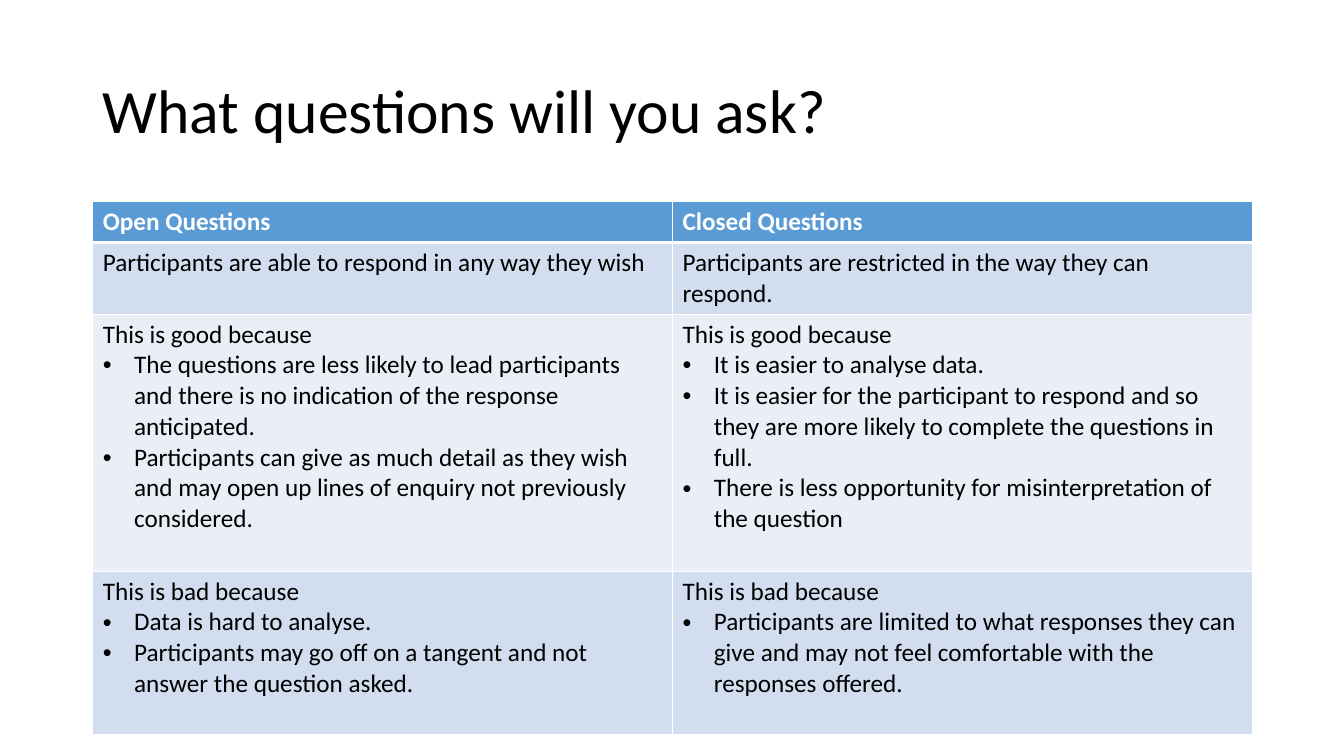
from dataclasses import dataclass
from lxml.etree import SubElement
from pptx import Presentation
from pptx.dml.color import RGBColor
from pptx.enum.text import MSO_ANCHOR, PP_ALIGN
from pptx.oxml.ns import qn
from pptx.util import Inches, Pt


@dataclass(frozen=True)
class Theme:
    font: str = "Calibri"
    title: int = 44
    body: int = 18
    black: str = "000000"
    white: str = "FFFFFF"
    head: str = "5B9BD5"
    bands: tuple = ("EAEFF7", "D2DEEF")


theme = Theme()


def style(para, size, color, bold=False):
    for run in para.runs:
        run.font.name = theme.font
        run.font.size = Pt(size)
        run.font.bold = bold
        run.font.color.rgb = RGBColor.from_string(color)


def border(cell, side, width):
    line = SubElement(cell._tc.get_or_add_tcPr(), qn(f"a:ln{side}"), w=str(Pt(width)))
    fill = SubElement(line, qn("a:solidFill"))
    SubElement(fill, qn("a:srgbClr"), val=theme.white)


rows = [
    (0.4, ["Open Questions"], ["Closed Questions"]),
    (0.71, ["Participants are able to respond in any way they wish"],
     ["Participants are restricted in the way they can respond."]),
    (2.55, ["This is good because",
            "The questions are less likely to lead participants and there is no "
            "indication of the response anticipated.",
            "Participants can give as much detail as they wish and may open up "
            "lines of enquiry not previously considered."],
     ["This is good because",
      "It is easier to analyse data.",
      "It is easier for the participant to respond and so they are more likely "
      "to complete the questions in full.",
      "There is less opportunity for misinterpretation of the question"]),
    (1.62, ["This is bad because",
            "Data is hard to analyse.",
            "Participants may go off on a tangent and not answer the question asked."],
     ["This is bad because",
      "Participants are limited to what responses they can give and may not feel "
      "comfortable with the responses offered."]),
]

deck = Presentation()
deck.slide_width = Inches(13.33)
deck.slide_height = Inches(7.5)
slide = deck.slides.add_slide(deck.slide_layouts[5])

title = slide.shapes.title
title.left, title.top = Inches(0.92), Inches(0.4)
title.width, title.height = Inches(11.5), Inches(1.45)
title.text_frame.text = "What questions will you ask?"
title.text_frame.vertical_anchor = MSO_ANCHOR.MIDDLE
head = title.text_frame.paragraphs[0]
head.alignment = PP_ALIGN.LEFT
head.line_spacing = 0.9
style(head, theme.title, theme.black)

high = sum(row[0] for row in rows)
table = slide.shapes.add_table(
    len(rows), 2, Inches(0.92), Inches(2), Inches(11.5), Inches(high)).table

for r, (tall, *texts) in enumerate(rows):
    table.rows[r].height = Inches(tall)
    for c, lines in enumerate(texts):
        cell = table.cell(r, c)
        top = 3 if r == 1 else 1
        base = 3 if r == 0 else 1
        for side, width in zip("LRTB", (1, 1, top, base)):
            border(cell, side, width)
        cell.fill.solid()
        shade = theme.bands[r % 2] if r else theme.head
        cell.fill.fore_color.rgb = RGBColor.from_string(shade)
        frame = cell.text_frame
        for i, line in enumerate(lines):
            para = frame.add_paragraph() if i else frame.paragraphs[0]
            para.text = line
            style(para, theme.body, theme.black if r else theme.white, r == 0)
            if i:
                props = para._p.get_or_add_pPr()
                props.set("marL", str(Inches(0.31)))
                props.set("indent", str(Inches(-0.31)))
                SubElement(props, qn("a:buFont"), typeface="Arial")
                SubElement(props, qn("a:buChar"), char="•")

deck.save("out.pptx")
